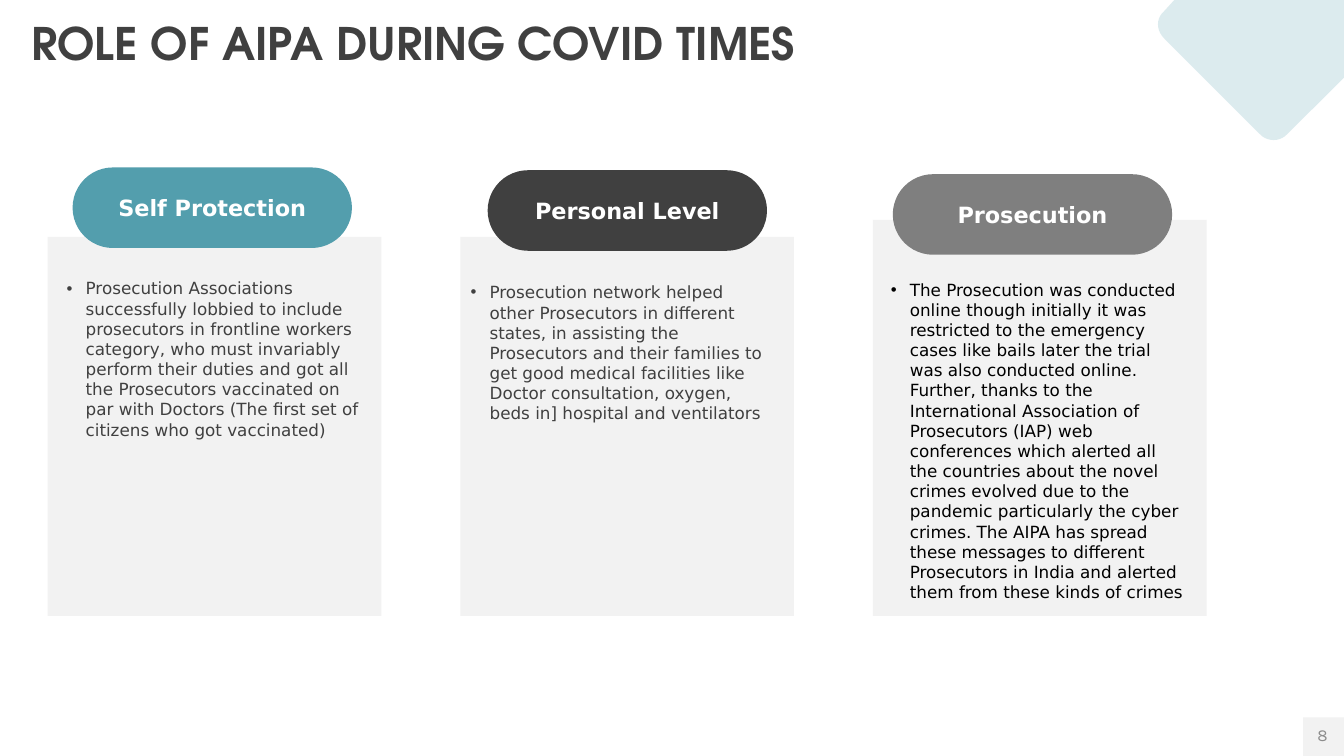
from lxml import etree
from pptx import Presentation
from pptx.dml.color import RGBColor
from pptx.enum.shapes import MSO_SHAPE
from pptx.enum.text import MSO_ANCHOR, PP_ALIGN
from pptx.oxml.ns import qn
from pptx.util import Cm, Pt

RECTANGLE = MSO_SHAPE.RECTANGLE
PILL = MSO_SHAPE.ROUNDED_RECTANGLE
MIDDLE = MSO_ANCHOR.MIDDLE
LEFT, CENTER, RIGHT = PP_ALIGN.LEFT, PP_ALIGN.CENTER, PP_ALIGN.RIGHT

COLORS = {
    "teal": "539EAD", "dark": "404040", "gray": "7F7F7F", "panel": "F2F2F2",
    "white": "FFFFFF", "black": "000000", "number": "8C8C8C",
}
BODY_FONT = "DejaVu Sans"
PANEL_WIDTH, PANEL_BOTTOM, PANEL_STEP = 8.41, 15.52, 10.4
PILL_WIDTH, PILL_HEIGHT = 7.04, 2.03

COLUMNS = [
    {
        "heading": "Self Protection", "fill": "teal", "panel_top": 5.97,
        "pill": (1.83, 4.22), "body": (1.68, 7.01, 4.11), "color": "dark",
        "text": "Prosecution Associations successfully lobbied to include "
                "prosecutors in frontline workers category, who must invariably "
                "perform their duties and got all the Prosecutors vaccinated on "
                "par with Doctors (The first set of citizens who got vaccinated)",
    },
    {
        "heading": "Personal Level", "fill": "dark", "panel_top": 5.97,
        "pill": (12.29, 4.29), "body": (11.86, 7.11, 5.26), "color": "dark",
        "text": "Prosecution network helped other Prosecutors in different "
                "states, in assisting the Prosecutors and their families to get "
                "good medical facilities like Doctor consultation, oxygen, beds "
                "in] hospital and ventilators",
    },
    {
        "heading": "Prosecution", "fill": "gray", "panel_top": 5.54,
        "pill": (22.5, 4.39), "body": (22.45, 7.04, 8.2), "color": "black",
        "text": "The Prosecution was conducted online though initially it was "
                "restricted to the emergency cases like bails later the trial "
                "was also conducted online. Further, thanks to the International "
                "Association of Prosecutors (IAP) web conferences which alerted "
                "all the countries about the novel crimes evolved due to the "
                "pandemic particularly the cyber crimes. The AIPA has spread "
                "these messages to different Prosecutors in India and alerted "
                "them from these kinds of crimes",
    },
]


def curve(start, control_a, control_b, end, steps=10):
    """Return the points of a cubic curve after its start."""
    points = []
    for step in range(1, steps + 1):
        t = step / steps
        weights = ((1 - t) ** 3, 3 * t * (1 - t) ** 2, 3 * t * t * (1 - t), t ** 3)
        corners = (start, control_a, control_b, end)
        points.append(tuple(
            sum(weight * corner[axis] for weight, corner in zip(weights, corners))
            for axis in (0, 1)))
    return points


class SlideBuilder:
    """Hold the style and the current slide, and draw its elements."""

    def __init__(self, slide):
        """Keep the shapes of the current slide."""
        self.shapes = slide.shapes

    def paint(self, shape, color):
        """Give a shape a flat fill without line or shadow."""
        shape.shadow.inherit = False
        shape.fill.solid()
        shape.fill.fore_color.rgb = RGBColor.from_string(COLORS[color])
        shape.line.fill.background()

    def label(self, shape, text, size, color, font=BODY_FONT, bold=False,
              align=LEFT, bullet=False):
        """Put one styled paragraph into a shape and return it."""
        frame = shape.text_frame
        frame.word_wrap = True
        frame.text = text
        paragraph = frame.paragraphs[0]
        paragraph.alignment = align
        if bullet:
            properties = paragraph._p.get_or_add_pPr()
            properties.set("marL", str(Cm(0.48)))
            properties.set("indent", str(-Cm(0.48)))
            etree.SubElement(properties, qn("a:buFont"), typeface="Arial")
            etree.SubElement(properties, qn("a:buChar"), char="•")
        run = paragraph.runs[0]
        run.font.name = font
        run.font.size = Pt(size)
        run.font.bold = bold
        run.font.color.rgb = RGBColor.from_string(COLORS[color])
        return paragraph

    def box(self, kind, left, top, width, height, color):
        """Add a filled preset shape."""
        shape = self.shapes.add_shape(kind, Cm(left), Cm(top), Cm(width), Cm(height))
        self.paint(shape, color)
        return shape

    def text(self, left, top, width, height, margin=0):
        """Add an empty text box with side margins twice the upright ones."""
        shape = self.shapes.add_textbox(Cm(left), Cm(top), Cm(width), Cm(height))
        frame = shape.text_frame
        frame.margin_left = frame.margin_right = Cm(margin)
        frame.margin_top = frame.margin_bottom = Cm(margin / 2)
        return shape

    def pill(self, left, top, text, color):
        """Add a heading with fully rounded ends."""
        shape = self.box(PILL, left, top, PILL_WIDTH, PILL_HEIGHT, color)
        shape.adjustments[0] = 0.5
        shape.text_frame.vertical_anchor = MIDDLE
        self.label(shape, text, 16, "white", bold=True, align=CENTER)

    def column(self, index, column):
        """Add a panel with its heading and bullet text."""
        top = column["panel_top"]
        self.box(RECTANGLE, 1.2 + index * PANEL_STEP, top,
                 PANEL_WIDTH, PANEL_BOTTOM - top, "panel")
        self.pill(*column["pill"], column["heading"], column["fill"])
        left, top, height = column["body"]
        body = self.text(left, top, 7.49, height)
        self.label(body, column["text"], 12, column["color"], bullet=True)

    def outline(self, points, color, opacity):
        """Add a closed translucent outline."""
        points = [(Cm(x), Cm(y)) for x, y in points]
        builder = self.shapes.build_freeform(*points[0], scale=1.0)
        builder.add_line_segments(points[1:], close=True)
        shape = builder.convert_to_shape()
        self.paint(shape, color)
        fill_color = shape._element.spPr.find(".//" + qn("a:srgbClr"))
        etree.SubElement(fill_color, qn("a:alpha"), val=str(opacity * 1000))


def main():
    """Build the slide and save it."""
    presentation = Presentation()
    presentation.slide_width, presentation.slide_height = Cm(33.87), Cm(19.05)
    slide = presentation.slides.add_slide(presentation.slide_layouts[6])
    builder = SlideBuilder(slide)

    builder.box(RECTANGLE, 32.84, 18.08, 1.03, 0.97, "panel")
    title = builder.text(0.79, 0.56, 29.21, 1.22)
    heading = builder.label(title, "ROLE OF AIPA DURING COVID TIMES", 32, "dark",
                            font="TeX Gyre Adventor", bold=True)
    heading.line_spacing = 0.9
    number = builder.text(32.54, 18.01, 1.17, 1.02, margin=0.25)
    number.text_frame.vertical_anchor = MIDDLE
    builder.label(number, "8", 12, "number", font="Karla", align=RIGHT)

    for index, column in enumerate(COLUMNS):
        builder.column(index, column)

    bottom_right, bottom_left = (32.44, 3.38), (31.75, 3.38)
    left_low, left_high = (29.34, 0.97), (29.34, 0.28)
    diamond = [(29.64, -0.05), (33.87, -0.05), (33.87, 1.96), bottom_right]
    diamond += curve(bottom_right, (32.26, 3.58), (31.93, 3.58), bottom_left)
    diamond.append(left_low)
    diamond += curve(left_low, (29.13, 0.76), (29.13, 0.46), left_high)
    builder.outline(diamond, "teal", 20)

    presentation.save("out.pptx")


if __name__ == "__main__":
    main()
